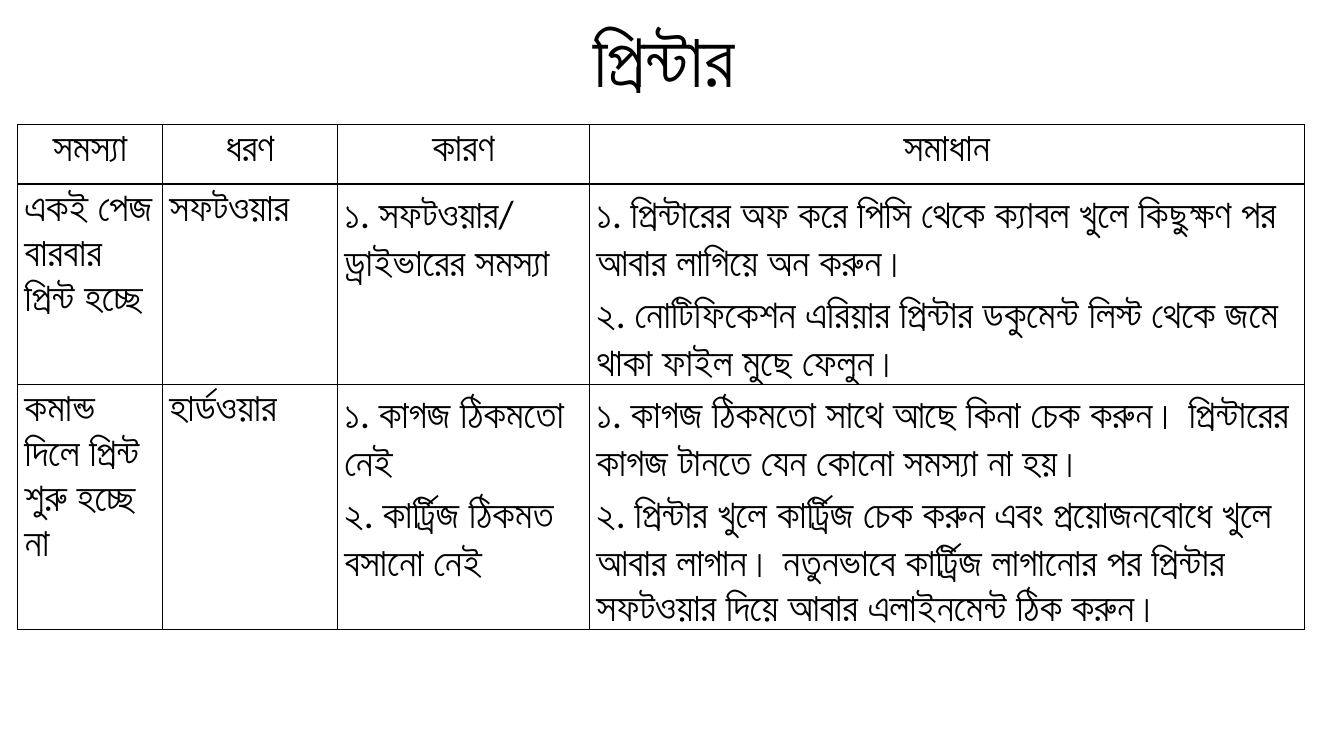
"""Build the printer troubleshooting slide: a title above a table of problems and solutions."""
from dataclasses import dataclass
from typing import NamedTuple

from lxml import etree
from pptx import Presentation
from pptx import util as u
from pptx.dml.color import RGBColor
from pptx.enum import text
from pptx.oxml.ns import qn


@dataclass(frozen=True)
class Theme:
    font: str = "Calibri"
    ink: RGBColor = RGBColor(0, 0, 0)
    title_size: float = 54
    body_size: float = 28
    thin: float = 0.5
    thick: float = 1.5


class Problem(NamedTuple):
    symptom: str
    kind: str
    causes: tuple[str, ...]
    solutions: tuple[str, ...]


THEME = Theme()
HEADINGS = ("সমস্যা", "ধরণ", "কারণ", "সমাধান")
PROBLEMS = (
    Problem(
        "একই পেজ বারবার প্রিন্ট হচ্ছে",
        "সফটওয়ার",
        ("১. সফটওয়ার/ ড্রাইভারের সমস্যা",),
        (
            "১. প্রিন্টারের অফ করে পিসি থেকে ক্যাবল খুলে কিছুক্ষণ পর আবার লাগিয়ে অন করুন।",
            "২. নোটিফিকেশন এরিয়ার প্রিন্টার ডকুমেন্ট লিস্ট থেকে জমে থাকা ফাইল মুছে ফেলুন।",
        ),
    ),
    Problem(
        "কমান্ড দিলে প্রিন্ট শুরু হচ্ছে না",
        "হার্ডওয়ার",
        ("১. কাগজ ঠিকমতো নেই", "২. কার্ট্রিজ ঠিকমত বসানো নেই"),
        (
            "১. কাগজ ঠিকমতো সাথে আছে কিনা চেক করুন। প্রিন্টারের কাগজ টানতে যেন কোনো সমস্যা না হয়।",
            "২. প্রিন্টার খুলে কার্ট্রিজ চেক করুন এবং প্রয়োজনবোধে খুলে আবার লাগান। "
            "নতুনভাবে কার্ট্রিজ লাগানোর পর প্রিন্টার সফটওয়ার দিয়ে আবার এলাইনমেন্ট ঠিক করুন।",
        ),
    ),
)
COLUMN_WIDTHS = (103.5, 125, 180, 510.5)
ROW_HEIGHTS = (42.5, 29.5, 29.5)


def apply(target: object, values: dict[str, object]) -> None:
    """Set every named attribute on the target."""
    for name, value in values.items():
        setattr(target, name, value)


def write(frame: object, lines: tuple[str, ...], size: float, bold: bool,
          align: text.PP_ALIGN, spacing: float) -> None:
    """Fill a text frame with one formatted paragraph per line."""
    for index, line in enumerate(lines):
        paragraph = frame.add_paragraph() if index else frame.paragraphs[0]
        apply(paragraph, {"alignment": align, "line_spacing": spacing,
                          "space_before": u.Pt(0), "space_after": u.Pt(0)})
        run = paragraph.add_run()
        run.text = line
        apply(run.font, {"name": THEME.font, "size": u.Pt(size), "bold": bold})
        run.font.color.rgb = THEME.ink


def draw_borders(cell: object, weights: dict[str, float]) -> None:
    """Give each named side of a cell a solid line."""
    properties = cell._tc.get_or_add_tcPr()
    for index, (side, weight) in enumerate(weights.items()):
        line = etree.Element(qn(f"a:{side}"), w=str(u.Pt(weight)))
        fill = etree.SubElement(line, qn("a:solidFill"))
        etree.SubElement(fill, qn("a:srgbClr"), val=str(THEME.ink))
        properties.insert(index, line)


def add_title(slide: object, heading: str) -> None:
    """Place the slide title."""
    title = slide.shapes.title
    apply(title, {"left": u.Pt(60), "top": u.Pt(13), "width": u.Pt(828), "height": u.Pt(63.5)})
    apply(title.text_frame, {"vertical_anchor": text.MSO_ANCHOR.MIDDLE, "word_wrap": True})
    write(title.text_frame, (heading,), THEME.title_size, True, text.PP_ALIGN.CENTER, 0.9)


def add_problems(slide: object, problems: tuple[Problem, ...]) -> None:
    """Draw the table of problems under its headings."""
    rows = [tuple((heading,) for heading in HEADINGS)]
    rows += [((p.symptom,), (p.kind,), p.causes, p.solutions) for p in problems]
    table = slide.shapes.add_table(
        len(rows), len(HEADINGS), u.Pt(12.5), u.Pt(89),
        u.Pt(sum(COLUMN_WIDTHS)), u.Pt(sum(ROW_HEIGHTS))).table
    apply(table, {"first_row": False, "horz_banding": False})
    for column, width in zip(table.columns, COLUMN_WIDTHS):
        column.width = u.Pt(width)
    for row, height in zip(table.rows, ROW_HEIGHTS):
        row.height = u.Pt(height)
    for r, entries in enumerate(rows):
        header = r == 0
        align = text.PP_ALIGN.CENTER if header else text.PP_ALIGN.LEFT
        for c, lines in enumerate(entries):
            cell = table.cell(r, c)
            apply(cell, {"margin_left": u.Pt(5), "margin_right": u.Pt(5),
                         "margin_top": 0, "margin_bottom": 0})
            cell.fill.background()
            draw_borders(cell, {"lnL": THEME.thin, "lnR": THEME.thin,
                                "lnT": THEME.thick if r == 1 else THEME.thin,
                                "lnB": THEME.thick if header else THEME.thin})
            write(cell.text_frame, lines, THEME.body_size, header, align, 1.15)


def main() -> None:
    """Create the presentation and save it."""
    deck = Presentation()
    apply(deck, {"slide_width": u.Pt(960), "slide_height": u.Pt(540)})
    slide = deck.slides.add_slide(deck.slide_layouts[5])
    add_title(slide, "প্রিন্টার")
    add_problems(slide, PROBLEMS)
    deck.save("out.pptx")


if __name__ == "__main__":
    main()
